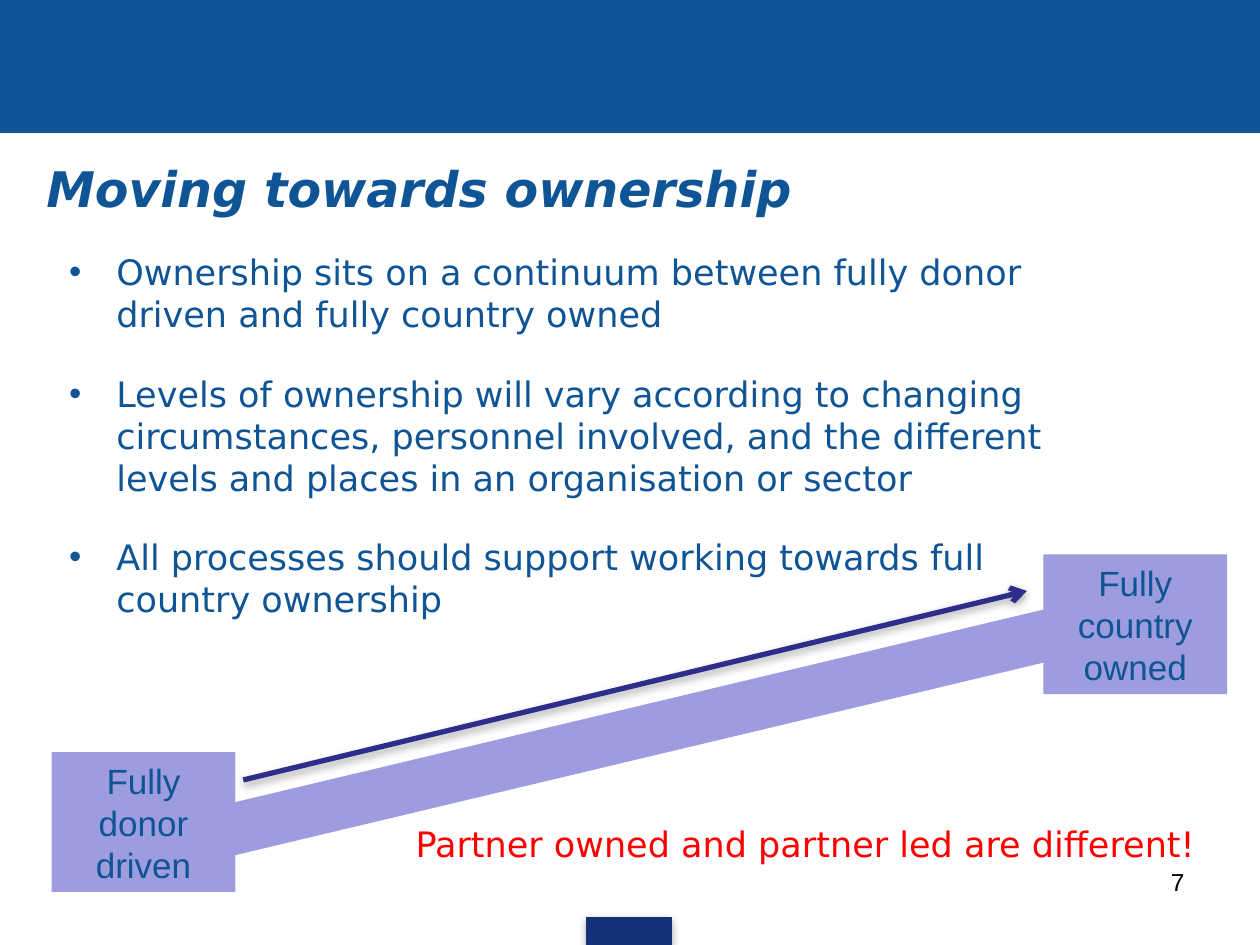
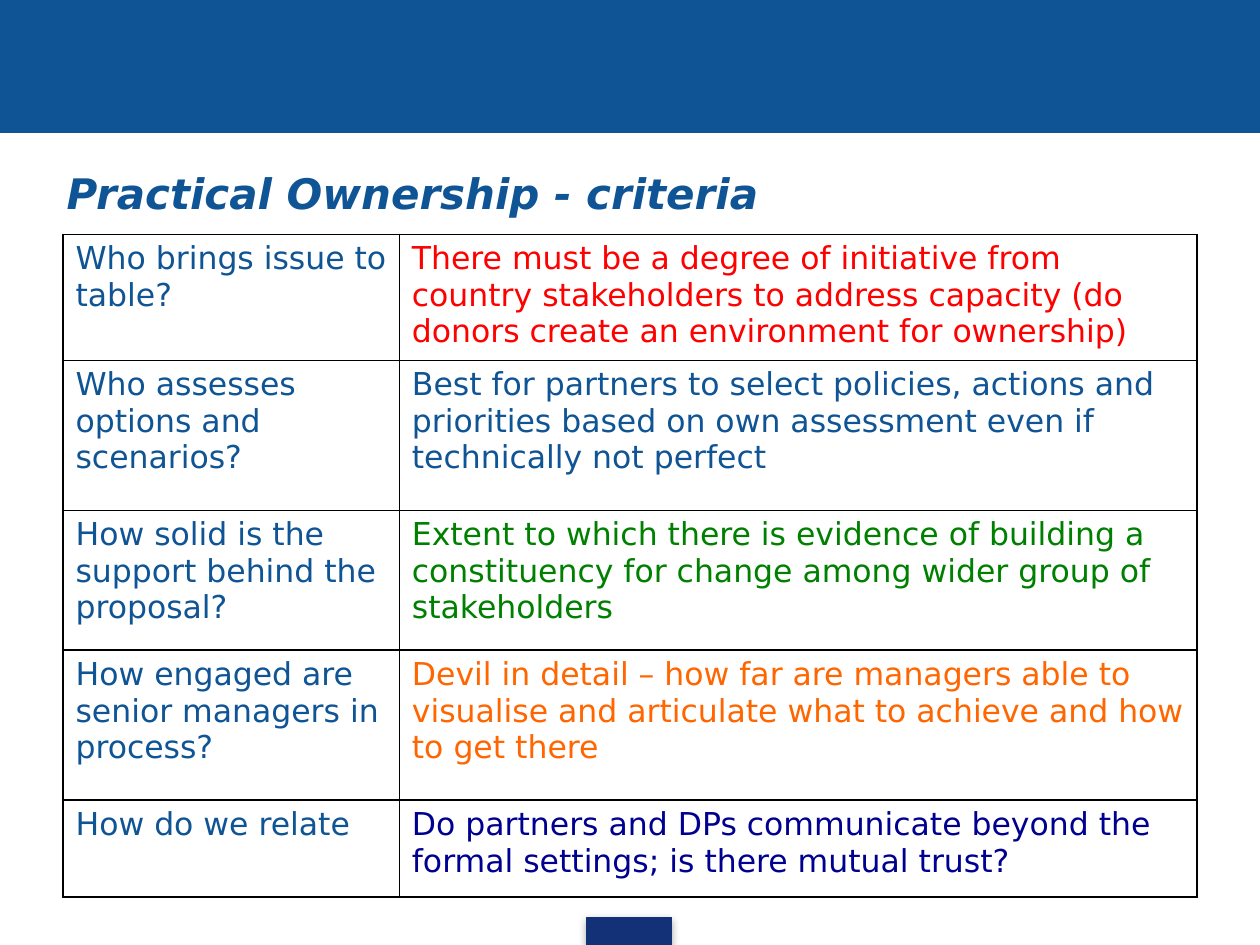
from lxml.etree import SubElement as Sub
from pptx import Presentation
from pptx.dml.color import RGBColor as RGB
from pptx.enum.shapes import MSO_CONNECTOR as Conn, MSO_SHAPE as Kind
from pptx.enum.text import MSO_ANCHOR as Anchor, PP_ALIGN as Align
from pptx.oxml import parse_xml
from pptx.oxml.ns import nsdecls, qn
from pptx.util import Pt

# Content
POINTS = [
    "Ownership sits on a continuum between fully donor driven and fully country owned",
    "Levels of ownership will vary according to changing circumstances, personnel "
    "involved, and the different levels and places in an organisation or sector",
    "All processes should support working towards full country ownership",
]
ENDS = [("Fully donor driven", 29.5, 429.8), ("Fully country owned", 596.2, 316.8)]

# Colours and fonts
BLUE = RGB(0x0F, 0x54, 0x94)
NAVY = RGB(0x13, 0x31, 0x76)
LILAC = RGB(0x9C, 0x9C, 0xDF)
INDIGO = RGB(0x2D, 0x2D, 0x8A)
RED = RGB(0xFF, 0, 0)
GREEN = RGB(0, 0x80, 0)
ORANGE = RGB(0xFF, 0x66, 0)
DARK = RGB(0, 0, 0x90)
BLACK = RGB(0, 0, 0)
SANS, ARIAL = "DejaVu Sans", "Arial"

CRITERIA = [  # question, answer, answer colour, row height
    ("Who brings issue to table?",
     "There must be a degree of initiative from country stakeholders to address "
     "capacity (do donors create an environment for ownership)", RED, 69.8),
    ("Who assesses options and scenarios?",
     "Best for partners to select policies, actions and priorities based on own "
     "assessment even if technically not perfect", BLUE, 85.7),
    ("How solid is the support behind the proposal?",
     "Extent to which there is evidence of building a constituency for change "
     "among wider group of stakeholders", GREEN, 79.9),
    ("How engaged are senior managers in process?",
     "Devil in detail – how far are managers able to visualise and articulate "
     "what to achieve and how to get there", ORANGE, 85.7),
    ("How do we relate",
     "Do partners and DPs communicate beyond the formal settings; is there "
     "mutual trust?", DARK, 55.4),
]
COLS = [192.2, 455.8]
WIDE, HIGH = 720, 540


def write(frame, text, size=20, color=BLUE, font=SANS, bold=False, align=Align.LEFT,
          anchor=Anchor.TOP, bullet=False, gap=0):
    """Fill a text frame; a list of strings gives one paragraph each."""
    frame.word_wrap = True
    frame.vertical_anchor = anchor
    lines = [text] if isinstance(text, str) else text
    for i, line in enumerate(lines):
        para = frame.add_paragraph() if i else frame.paragraphs[0]
        para.alignment = align
        if i:
            para.space_before = Pt(gap)
        if bullet:
            props = para._p.get_or_add_pPr()
            props.set("marL", str(Pt(27)))
            props.set("indent", str(Pt(-27)))
            Sub(props, qn("a:buFont")).set("typeface", ARIAL)
            Sub(props, qn("a:buChar")).set("char", "•")
        run = para.add_run()
        run.text = line
        run.font.name, run.font.size = font, Pt(size)
        run.font.bold = run.font.italic = bold
        run.font.color.rgb = color


def label(slide, text, box, **style):
    shape = slide.shapes.add_textbox(*map(Pt, box))
    write(shape.text_frame, text, **style)


def block(slide, box, fill, edge=False):
    shape = slide.shapes.add_shape(Kind.RECTANGLE, *map(Pt, box))
    shape.shadow.inherit = False
    shape.fill.solid()
    shape.fill.fore_color.rgb = fill
    if edge:
        shape.line.color.rgb = fill
        shape.line.width = Pt(0.75)
    else:
        shape.line.fill.background()
    return shape


def shade(shape):
    """Give a shape or connector the soft drop shadow."""
    props = shape._element.spPr
    old = props.find(qn("a:effectLst"))
    if old is not None:
        props.remove(old)
    props.append(parse_xml(
        f'<a:effectLst {nsdecls("a")}><a:outerShdw blurRad="{Pt(5)}" '
        f'dist="{Pt(1.8)}" dir="5400000" rotWithShape="0"><a:srgbClr val="000000">'
        '<a:alpha val="35000"/></a:srgbClr></a:outerShdw></a:effectLst>'))


def rule(cell):
    """Draw thin black borders round a cell."""
    props = cell._tc.get_or_add_tcPr()
    for i, side in enumerate("LRTB"):
        props.insert(i, parse_xml(
            f'<a:ln{side} {nsdecls("a")} w="{Pt(1)}"><a:solidFill>'
            f'<a:srgbClr val="{BLACK}"/></a:solidFill></a:ln{side}>'))


def page(deck, title, box, size):
    """Add a slide with the top band, the foot tab and a title."""
    slide = deck.slides.add_slide(deck.slide_layouts[6])
    block(slide, (0, 0, WIDE, 75.6), BLUE, edge=True)
    shade(block(slide, (335.5, 524.2, 48.2, 15.8), NAVY, edge=True))
    label(slide, title, box, size=size, bold=True, anchor=Anchor.MIDDLE)
    return slide


def moving(deck):
    slide = page(deck, "Moving towards ownership", (19.4, 77, 520.6, 60.5), 28)
    label(slide, "7", (516.2, 491.8, 167.8, 37.4), size=14, color=BLACK,
          font=ARIAL, align=Align.RIGHT)

    # Ramp, points and the two ends
    block(slide, (59, 404.6, 605.5, 29.5), LILAC).rotation = 346.6
    label(slide, POINTS, (32.4, 139.7, 595.4, 220.3), bullet=True, gap=21.5)
    for text, left, top in ENDS:
        end = block(slide, (left, top, 105.1, 79.9), LILAC)
        write(end.text_frame, text, font=ARIAL, align=Align.CENTER,
              anchor=Anchor.MIDDLE)

    # Arrow up the ramp
    arrow = slide.shapes.add_connector(
        Conn.STRAIGHT, *map(Pt, (139, 445.7, 586.8, 337.7)))
    arrow.line.color.rgb = INDIGO
    arrow.line.width = Pt(3)
    Sub(arrow.line._get_or_add_ln(), qn("a:tailEnd")).set("type", "arrow")
    shade(arrow)
    label(slide, "Partner owned and partner led are different!",
          (230.4, 466.6, 489.6, 31.7), color=RED)


def practical(deck):
    slide = page(deck, "Practical Ownership - criteria", (31, 87.8, 648, 44.6), 24)
    high = sum(row[-1] for row in CRITERIA)
    grid = slide.shapes.add_table(
        len(CRITERIA), len(COLS), *map(Pt, (36, 133.9, sum(COLS), high))).table
    grid.first_row = grid.horz_banding = False
    for col, width in zip(grid.columns, COLS):
        col.width = Pt(width)
    for row, (ask, reply, color, tall) in zip(grid.rows, CRITERIA):
        row.height = Pt(tall)
        for cell, text, tint in zip(row.cells, (ask, reply), (BLUE, color)):
            cell.fill.background()
            rule(cell)
            write(cell.text_frame, text, size=18, color=tint)


def main():
    deck = Presentation()
    deck.slide_width, deck.slide_height = Pt(WIDE), Pt(HIGH)
    moving(deck)
    practical(deck)
    deck.save("out.pptx")


if __name__ == "__main__":
    main()
